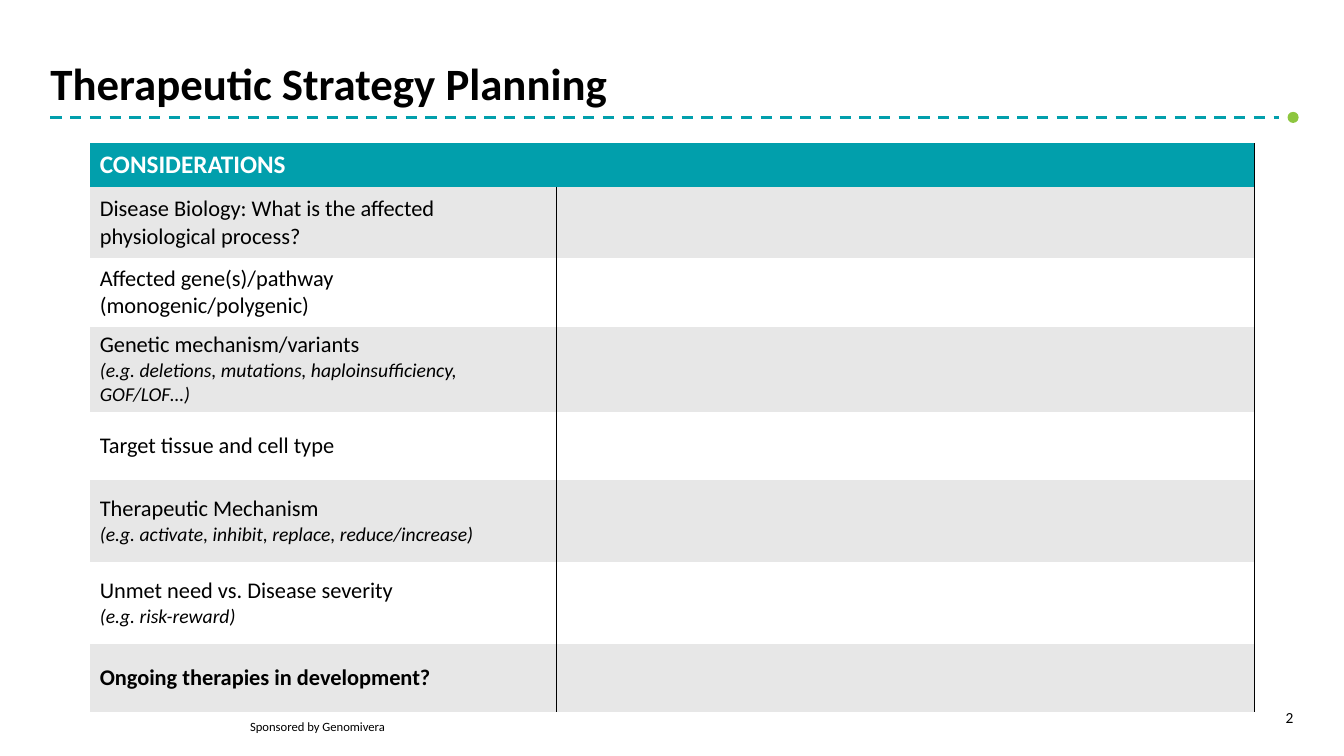
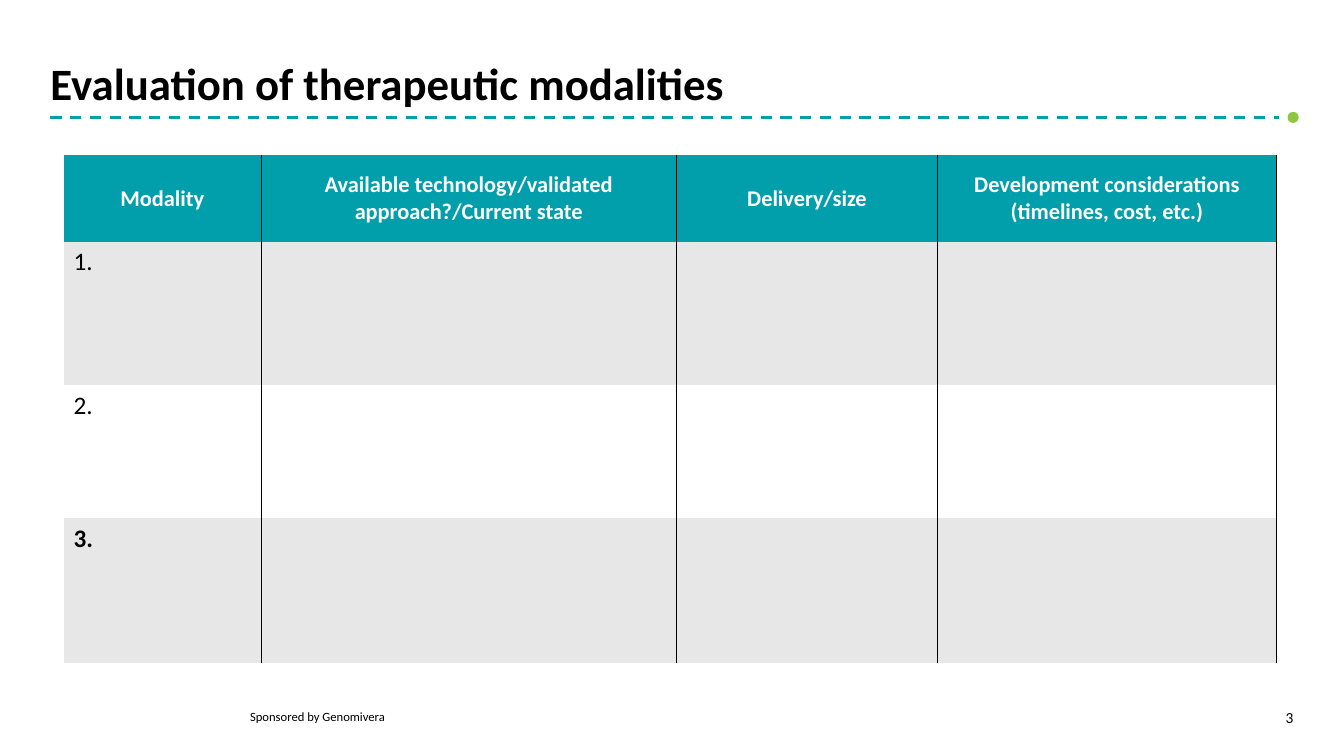
from collections import namedtuple

from lxml.etree import SubElement
from pptx import Presentation
from pptx.dml.color import RGBColor
from pptx.enum.dml import MSO_LINE
from pptx.enum.shapes import MSO_CONNECTOR, MSO_SHAPE
from pptx.enum.text import MSO_ANCHOR, MSO_AUTO_SIZE, PP_ALIGN
from pptx.oxml import parse_xml
from pptx.oxml.ns import nsdecls, qn
from pptx.util import Inches, Pt

TEAL = RGBColor(0x01, 0x9F, 0xAC)
GREEN = RGBColor(0x8D, 0xC6, 0x3F)
GREY = RGBColor(0xE7, 0xE7, 0xE7)
WHITE = RGBColor(0xFF, 0xFF, 0xFF)
BLACK = RGBColor(0x00, 0x00, 0x00)
FONT = "Calibri"
NO_STYLE = "{2D5ABB26-0587-4C30-8999-92F81FD0307C}"
HAIRLINE = Pt(0.25)

Page = namedtuple(
    "Page",
    "title number footer_top left top widths heights rows "
    "header_size header_align body_size body_anchor",
)

PAGES = [
    Page(
        title="Therapeutic Strategy Planning",
        number="2",
        footer_top=7.08,
        left=0.89,
        top=1.42,
        widths=[4.63, 6.92],
        heights=[0.44, 0.7, 0.68, 0.81, 0.68, 0.81, 0.81, 0.68],
        rows=[
            ["CONSIDERATIONS"],
            ["Disease Biology: What is the affected physiological process?"],
            ["Affected gene(s)/pathway (monogenic/polygenic)"],
            ["Genetic mechanism/variants\n(e.g. deletions, mutations, haploinsufficiency, GOF/LOF…)"],
            ["Target tissue and cell type"],
            ["Therapeutic Mechanism\n(e.g. activate, inhibit, replace, reduce/increase)"],
            ["Unmet need vs. Disease severity\n(e.g. risk-reward)"],
            ["Ongoing therapies in development?"],
        ],
        header_size=18,
        header_align=PP_ALIGN.LEFT,
        body_size=16,
        body_anchor=MSO_ANCHOR.MIDDLE,
    ),
    Page(
        title="Evaluation of therapeutic modalities",
        number="3",
        footer_top=6.98,
        left=0.63,
        top=1.54,
        widths=[1.96, 4.12, 2.59, 3.36],
        heights=[0.86, 1.42, 1.32, 1.44],
        rows=[
            [
                "Modality",
                "Available technology/validated approach?/Current state",
                "Delivery/size",
                "Development considerations (timelines, cost, etc.)",
            ],
            ["1."],
            ["2."],
            ["3."],
        ],
        header_size=16,
        header_align=PP_ALIGN.CENTER,
        body_size=18,
        body_anchor=MSO_ANCHOR.TOP,
    ),
]


def write_line(box, text, size, align=PP_ALIGN.LEFT, bold=False):
    frame = box.text_frame
    frame.word_wrap = True
    frame.auto_size = MSO_AUTO_SIZE.NONE
    frame.vertical_anchor = MSO_ANCHOR.BOTTOM
    frame.margin_left = frame.margin_right = frame.margin_top = frame.margin_bottom = 0
    frame.text = text
    para = frame.paragraphs[0]
    para.alignment = align
    format_span(para.runs[0], size, BLACK, bold)
    return para


def format_span(span, size, color, bold=False, italic=False):
    span.font.name = FONT
    span.font.size = Pt(size)
    span.font.color.rgb = color
    span.font.bold = bold
    span.font.italic = italic


deck = Presentation()
deck.slide_width = Inches(13.33)
deck.slide_height = Inches(7.5)

for page in PAGES:
    slide = deck.slides.add_slide(deck.slide_layouts[5])

    rule = slide.shapes.add_connector(
        MSO_CONNECTOR.STRAIGHT, Inches(0.5), Inches(1.17), Inches(12.69), Inches(1.17)
    )
    rule.line.color.rgb = TEAL
    rule.line.width = Pt(2)
    rule.line.dash_style = MSO_LINE.DASH
    SubElement(rule.element.spPr, qn("a:effectLst"))

    dot = slide.shapes.add_shape(
        MSO_SHAPE.OVAL, Inches(12.77), Inches(1.11), Inches(0.11), Inches(0.11)
    )
    dot.shadow.inherit = False
    dot.fill.solid()
    dot.fill.fore_color.rgb = GREEN
    dot.line.fill.background()

    title = slide.shapes.title
    title.left, title.top = Inches(0.5), Inches(0.47)
    title.width, title.height = Inches(12.33), Inches(0.61)
    write_line(title, page.title, 32, bold=True).line_spacing = 0.8

    number = slide.shapes.add_textbox(Inches(12.43), Inches(6.98), Inches(0.4), Inches(0.23))
    write_line(number, page.number, 11, PP_ALIGN.RIGHT)

    footer = slide.shapes.add_textbox(
        Inches(2.48), Inches(page.footer_top), Inches(4.55), Inches(0.2)
    )
    write_line(footer, "Sponsored by Genomivera", 9)

    frame = slide.shapes.add_table(
        len(page.heights), len(page.widths), Inches(page.left), Inches(page.top),
        Inches(sum(page.widths)), Inches(sum(page.heights)),
    )
    for style in frame.element.iter(qn("a:tableStyleId")):
        style.text = NO_STYLE
    table = frame.table
    for column, width in zip(table.columns, page.widths):
        column.width = Inches(width)
    for row, height in zip(table.rows, page.heights):
        row.height = Inches(height)
    if len(page.rows[0]) == 1:
        table.cell(0, 0).merge(table.cell(0, len(page.widths) - 1))

    last_row = len(page.rows) - 1
    for row_index, texts in enumerate(page.rows):
        is_header = row_index == 0
        for column_index in range(len(page.widths)):
            cell = table.cell(row_index, column_index)
            if cell.is_spanned:
                continue
            cell.fill.solid()
            cell.fill.fore_color.rgb = TEAL if is_header else (WHITE, GREY)[row_index % 2]
            sides = ["lnL", "lnR"] if column_index else ["lnR"]
            for position, side in enumerate(sides):
                border = parse_xml(
                    f'<a:{side} {nsdecls("a")} w="{HAIRLINE}"><a:solidFill>'
                    f'<a:srgbClr val="{BLACK}"/></a:solidFill></a:{side}>'
                )
                cell._tc.get_or_add_tcPr().insert(position, border)
            if column_index >= len(texts):
                continue
            cell.vertical_anchor = MSO_ANCHOR.MIDDLE if is_header else page.body_anchor
            cell.text_frame.text = texts[column_index]
            for line_index, para in enumerate(cell.text_frame.paragraphs):
                span = para.runs[0]
                if is_header:
                    para.alignment = page.header_align
                    format_span(span, page.header_size, WHITE, bold=True)
                elif line_index:
                    format_span(span, 14, BLACK, italic=True)
                else:
                    format_span(span, page.body_size, BLACK, bold=row_index == last_row)

deck.save("out.pptx")
